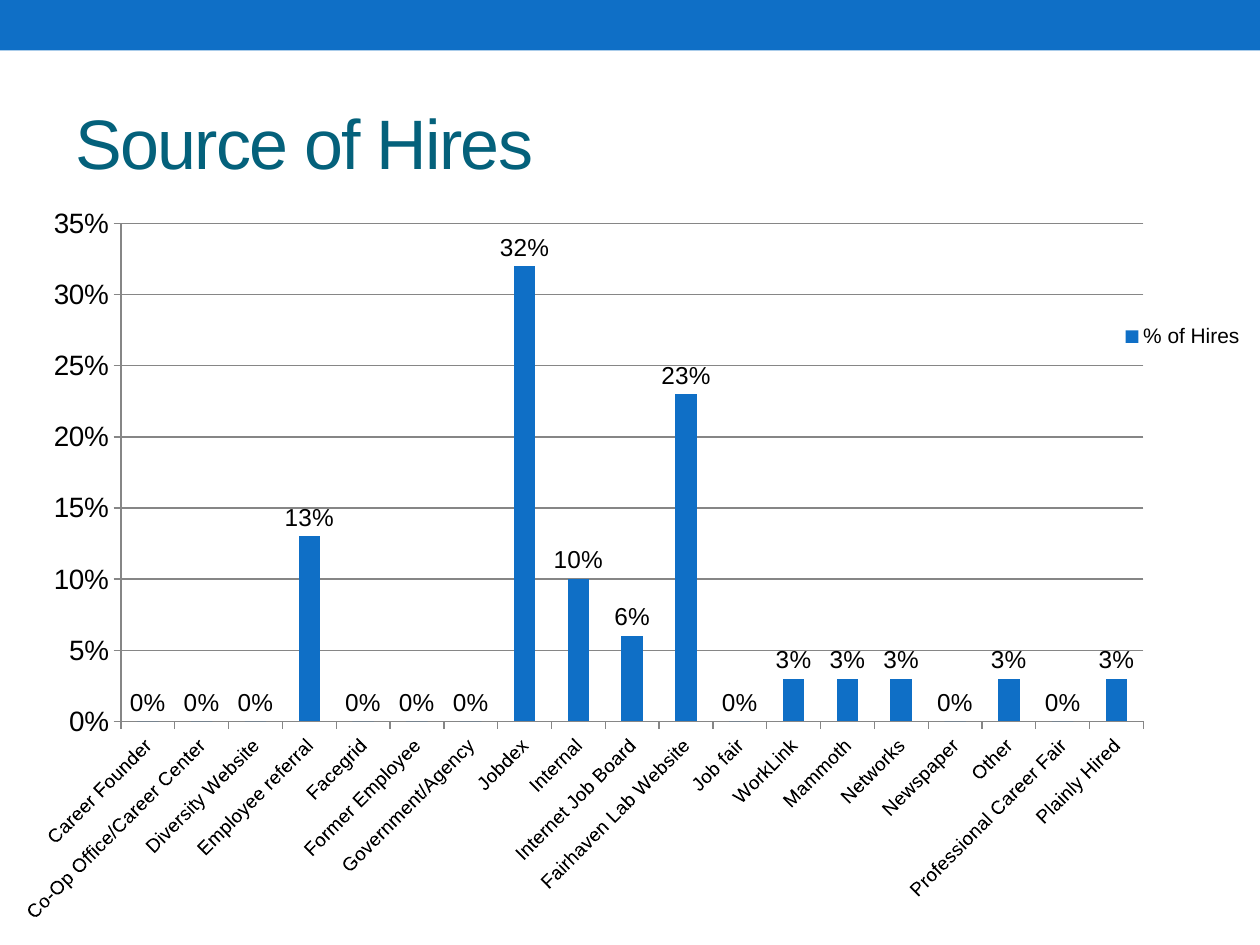
"""Build a slide with a column chart of the sources of hires."""
from lxml import etree
from pptx import Presentation
from pptx.chart.data import CategoryChartData
from pptx.dml.color import RGBColor
from pptx.enum.chart import XL_CHART_TYPE, XL_LABEL_POSITION, XL_LEGEND_POSITION, XL_TICK_MARK
from pptx.enum.shapes import MSO_SHAPE
from pptx.enum.text import MSO_ANCHOR
from pptx.oxml.ns import qn
from pptx.util import Inches, Pt

RECTANGLE = MSO_SHAPE.RECTANGLE
MIDDLE = MSO_ANCHOR.MIDDLE
COLUMNS = XL_CHART_TYPE.COLUMN_CLUSTERED
OUTSIDE_END = XL_LABEL_POSITION.OUTSIDE_END
RIGHT = XL_LEGEND_POSITION.RIGHT
TICK_OUT = XL_TICK_MARK.OUTSIDE
TICK_NONE = XL_TICK_MARK.NONE

COLORS = {"blue": "0F6FC6", "teal": "04617B", "black": "000000", "gray": "868686"}
FONT = "Arial"
PERCENT = "0%"

HIRES = {
    "Career Founder": 0,
    "Co-Op Office/Career Center": 0,
    "Diversity Website": 0,
    "Employee referral": 0.13,
    "Facegrid": 0,
    "Former Employee": 0,
    "Government/Agency": 0,
    "Jobdex": 0.32,
    "Internal": 0.1,
    "Internet Job Board": 0.06,
    "Fairhaven Lab Website": 0.23,
    "Job fair": 0,
    "WorkLink": 0.03,
    "Mammoth": 0.03,
    "Networks": 0.03,
    "Newspaper": 0,
    "Other": 0.03,
    "Professional Career Fair": 0,
    "Plainly Hired": 0.03,
}


class SlideBuilder:
    """Hold the style and the current slide."""

    def __init__(self, slide, colors, font):
        self.slide = slide
        self.colors = colors
        self.font = font

    def color(self, name):
        """Return the named colour."""
        return RGBColor.from_string(self.colors[name])

    def style_font(self, font, size, color="black"):
        """Set family, size and colour of a font."""
        formats = {"name": self.font, "size": Pt(size), "bold": False}
        for key, value in formats.items():
            setattr(font, key, value)
        font.color.rgb = self.color(color)

    def band(self, left, top, width, height, color):
        """Add a filled rectangle without outline."""
        shape = self.slide.shapes.add_shape(
            RECTANGLE, Inches(left), Inches(top), Inches(width), Inches(height))
        shape.shadow.inherit = False
        shape.fill.solid()
        shape.fill.fore_color.rgb = self.color(color)
        shape.line.fill.background()

    def title(self, text, left, top, width, height, size, color):
        """Add a title with tightened letters."""
        box = self.slide.shapes.add_textbox(
            Inches(left), Inches(top), Inches(width), Inches(height))
        formats = {"word_wrap": True, "vertical_anchor": MIDDLE}
        for key, value in formats.items():
            setattr(box.text_frame, key, value)
        span = box.text_frame.paragraphs[0].add_run()
        span.text = text
        self.style_font(span.font, size, color)
        span.font._element.set("spc", "-100")

    def place(self, parent, index, values):
        """Give a chart part a manual layout."""
        for old in parent.findall(qn("c:layout")):
            parent.remove(old)
        layout = etree.Element(qn("c:layout"))
        manual = etree.SubElement(layout, qn("c:manualLayout"))
        for key, value in values.items():
            etree.SubElement(manual, qn(f"c:{key}")).set("val", str(value))
        parent.insert(index, layout)

    def style_axis(self, axis, size, formats):
        """Set the font, line and ticks of an axis."""
        self.style_font(axis.tick_labels.font, size)
        axis.format.line.color.rgb = self.color("gray")
        shared = {"major_tick_mark": TICK_OUT, "minor_tick_mark": TICK_NONE}
        for key, value in {**shared, **formats}.items():
            setattr(axis, key, value)

    def column_chart(self, name, values, left, top, width, height):
        """Add a column chart of percentages."""
        data = CategoryChartData(number_format=PERCENT)
        data.categories = list(values)
        data.add_series(name, list(values.values()))
        chart = self.slide.shapes.add_chart(
            COLUMNS, Inches(left), Inches(top), Inches(width), Inches(height), data).chart
        self.style_font(chart.font, 18)
        chart.has_title = False

        plot = chart.plots[0]
        for key, value in {"gap_width": 150, "vary_by_categories": False,
                           "has_data_labels": True}.items():
            setattr(plot, key, value)
        labels = plot.data_labels
        for key, value in {"show_value": True, "number_format": PERCENT,
                           "number_format_is_linked": False,
                           "position": OUTSIDE_END}.items():
            setattr(labels, key, value)
        self.style_font(labels.font, 14)
        fill = plot.series[0].format.fill
        fill.solid()
        fill.fore_color.rgb = self.color("blue")

        self.style_axis(chart.category_axis, 11, {"has_major_gridlines": False})
        body = chart.category_axis._element.find(f"{qn('c:txPr')}/{qn('a:bodyPr')}")
        body.set("rot", "-2700000")
        axis = chart.value_axis
        self.style_axis(axis, 16, {"has_major_gridlines": True, "minimum_scale": 0,
                                   "maximum_scale": 0.35, "major_unit": 0.05})
        axis.major_gridlines.format.line.color.rgb = self.color("gray")
        axis.tick_labels.number_format = PERCENT
        axis.tick_labels.number_format_is_linked = False

        chart.has_legend = True
        legend = chart.legend
        legend.position = RIGHT
        legend.include_in_layout = False
        self.style_font(legend.font, 12)
        edges = {"xMode": "edge", "yMode": "edge"}
        self.place(legend._element, 1, {**edges, "x": 0.89, "y": 0.16, "w": 0.11, "h": 0.06})
        self.place(chart._chartSpace.chart.plotArea, 0,
                   {"layoutTarget": "inner", **edges,
                    "x": 0.076, "y": 0.034, "w": 0.837, "h": 0.687})


def main():
    """Build and save the deck."""
    deck = Presentation()
    deck.slide_width, deck.slide_height = Inches(10), Inches(7.5)
    page = SlideBuilder(deck.slides.add_slide(deck.slide_layouts[6]), COLORS, FONT)
    page.band(0, 0, 10, 0.4, "blue")
    page.title("Source of Hires", 0.5, 0.58, 9, 1.08, 40, "teal")
    page.column_chart("% of Hires", HIRES, 0.17, 1.58, 9.75, 5.75)
    deck.save("out.pptx")


if __name__ == "__main__":
    main()
